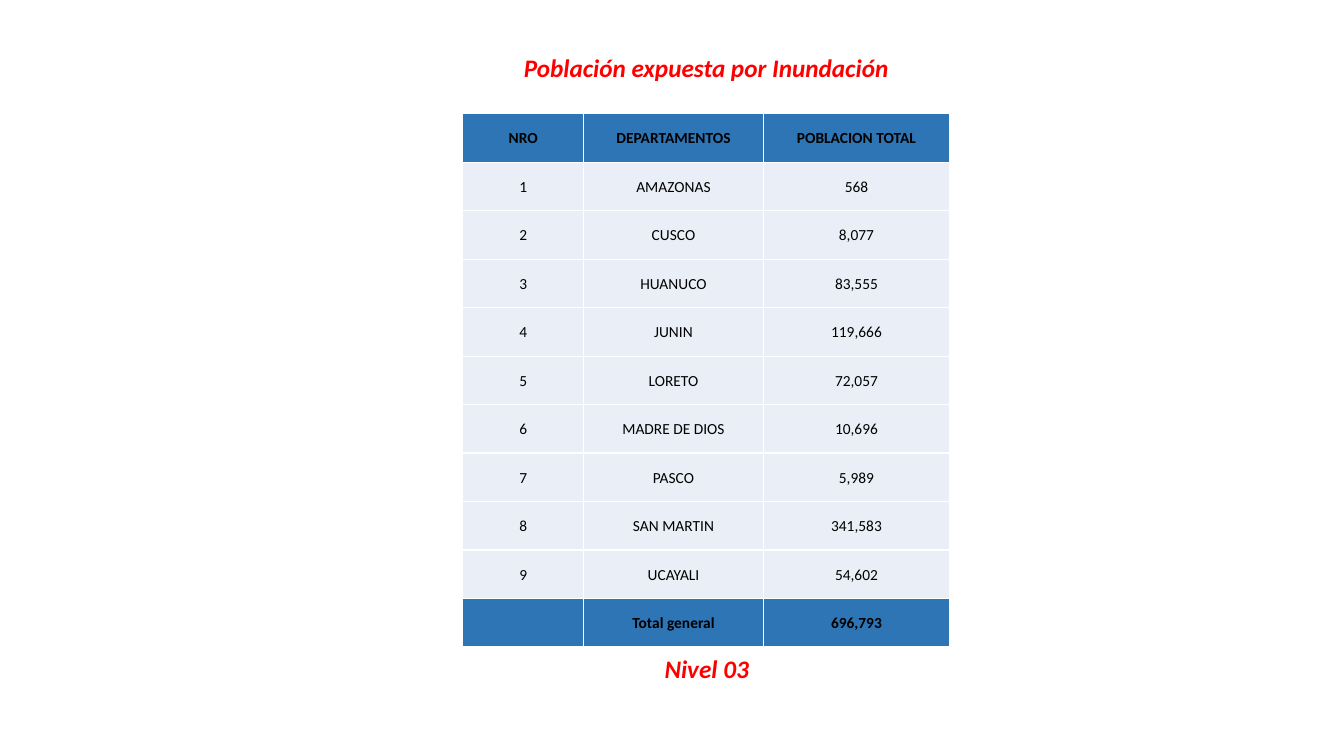
import dataclasses

import lxml.etree
import pptx
import pptx.dml.color
import pptx.enum.text
import pptx.oxml.ns
import pptx.util

Inches = pptx.util.Inches
Pt = pptx.util.Pt


@dataclasses.dataclass(frozen=True)
class Theme:
    font: str = "Calibri"
    title: str = "FF0000"
    text: str = "000000"
    band: str = "2E75B6"
    body: str = "EAEFF7"
    border: str = "FFFFFF"
    title_size: int = 18
    table_size: int = 11
    border_width: int = 1


THEME = Theme()

HEADER = ("NRO", "DEPARTAMENTOS", "POBLACION TOTAL")
POPULATION = (
    ("AMAZONAS", 568),
    ("CUSCO", 8077),
    ("HUANUCO", 83555),
    ("JUNIN", 119666),
    ("LORETO", 72057),
    ("MADRE DE DIOS", 10696),
    ("PASCO", 5989),
    ("SAN MARTIN", 341583),
    ("UCAYALI", 54602),
)
COLUMN_WIDTHS = (1.2, 1.78, 1.85)
TABLE_HEIGHT = 5.29


def rgb(color):
    return pptx.dml.color.RGBColor.from_string(color)


def format_text(tf, size, color, bold=False, italic=False):
    for p in tf.paragraphs:
        p.alignment = pptx.enum.text.PP_ALIGN.CENTER
        for r in p.runs:
            r.font.name = THEME.font
            r.font.size = Pt(size)
            r.font.color.rgb = rgb(color)
            r.font.bold = bold
            r.font.italic = italic


def add_heading(s, text, left, top, width, wrap):
    sp = s.shapes.add_textbox(Inches(left), Inches(top), Inches(width), Inches(0.4))
    tf = sp.text_frame
    tf.text = text
    tf.word_wrap = wrap
    tf.auto_size = pptx.enum.text.MSO_AUTO_SIZE.SHAPE_TO_FIT_TEXT
    format_text(tf, THEME.title_size, THEME.title, bold=True, italic=True)


def set_borders(cell):
    """Draw the four cell borders; they must precede the fill in tcPr."""
    tc_pr = cell._tc.get_or_add_tcPr()
    qn = pptx.oxml.ns.qn
    for i, side in enumerate(("lnL", "lnR", "lnT", "lnB")):
        ln = lxml.etree.Element(qn(f"a:{side}"), w=str(Pt(THEME.border_width)))
        fill = lxml.etree.SubElement(ln, qn("a:solidFill"))
        lxml.etree.SubElement(fill, qn("a:srgbClr"), val=THEME.border)
        tc_pr.insert(i, ln)


def fill_cell(cell, text, is_band):
    cell.fill.solid()
    cell.fill.fore_color.rgb = rgb(THEME.band if is_band else THEME.body)
    cell.margin_left = cell.margin_right = cell.margin_top = Inches(0.01)
    cell.margin_bottom = 0
    cell.vertical_anchor = pptx.enum.text.MSO_ANCHOR.MIDDLE
    cell.text_frame.text = text
    format_text(cell.text_frame, THEME.table_size, THEME.text, bold=is_band)
    set_borders(cell)


def add_population_table(s, left, top):
    # Numbered departments between the header and the total
    rows = [HEADER]
    rows += [(str(n), name, f"{count:,}")
             for n, (name, count) in enumerate(POPULATION, start=1)]
    total = sum(count for _, count in POPULATION)
    rows.append(("", "Total general", f"{total:,}"))

    table = s.shapes.add_table(
        len(rows), len(HEADER), Inches(left), Inches(top),
        Inches(sum(COLUMN_WIDTHS)), Inches(TABLE_HEIGHT)).table
    for column, width in zip(table.columns, COLUMN_WIDTHS):
        column.width = Inches(width)
    for i, row in enumerate(rows):
        for j, text in enumerate(row):
            fill_cell(table.cell(i, j), text, is_band=i in (0, len(rows) - 1))


def main():
    prs = pptx.Presentation()
    prs.slide_width = Inches(13.33)
    prs.slide_height = Inches(7.5)
    s = prs.slides.add_slide(prs.slide_layouts[6])

    # Title and level caption
    add_heading(s, "Población expuesta por Inundación", 5.08, 0.47, 3.85, wrap=False)
    add_heading(s, "Nivel 03", 6.46, 6.43, 1.1, wrap=True)

    # Exposed population by department
    add_population_table(s, 4.59, 1.13)

    prs.save("out.pptx")


if __name__ == "__main__":
    main()
